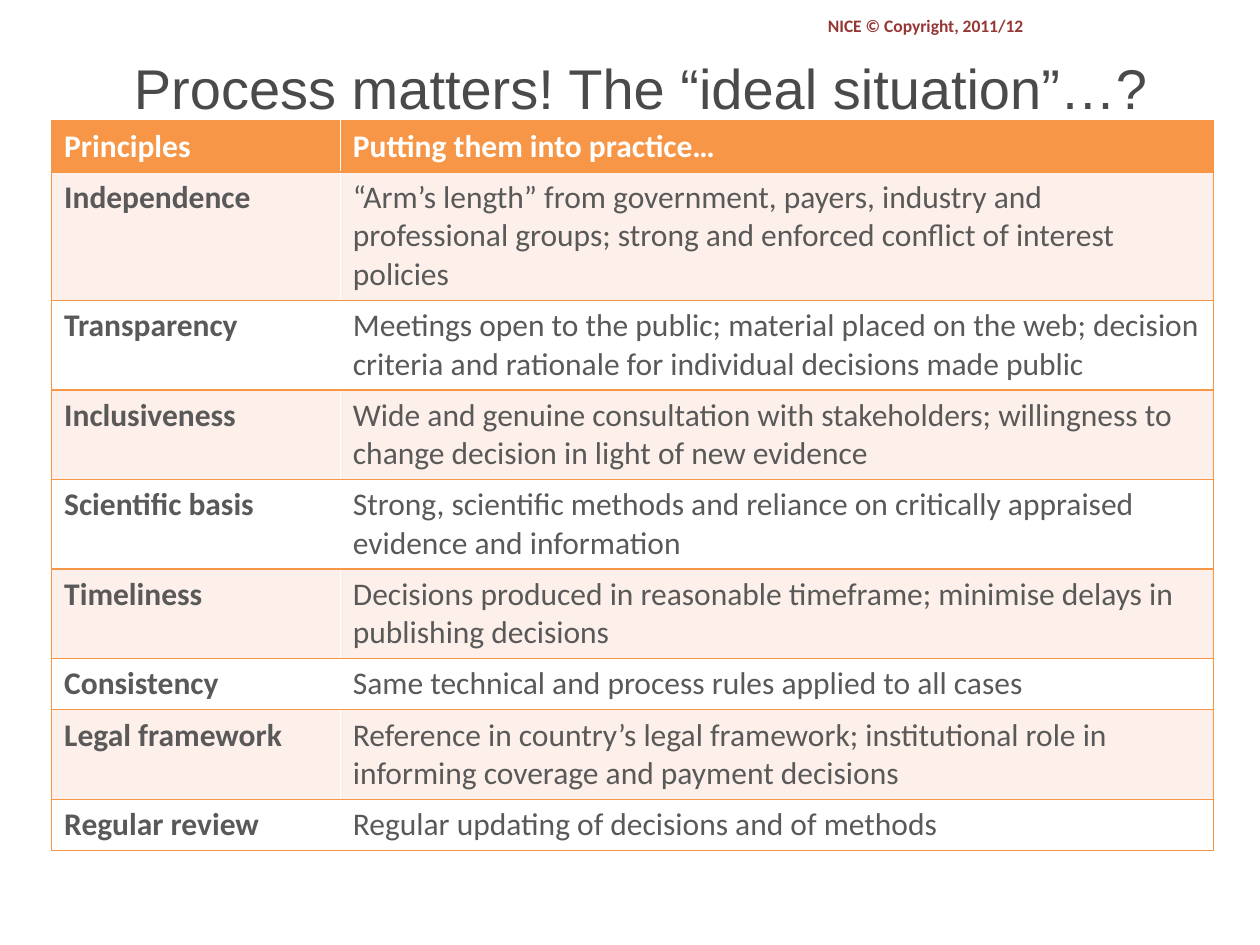
"""Build a slide that tabulates the principles of a sound decision process."""
from dataclasses import dataclass

from lxml import etree
from pptx import Presentation
from pptx import util as u
from pptx.dml.color import RGBColor
from pptx.enum import text
from pptx.oxml import ns

ORANGE = RGBColor(0xF7, 0x96, 0x46)
BLUSH = RGBColor(0xFD, 0xEF, 0xE9)
WHITE = RGBColor(0xFF, 0xFF, 0xFF)
GREY = RGBColor(0x59, 0x59, 0x59)
CHARCOAL = RGBColor(0x4A, 0x4A, 0x4A)
MAROON = RGBColor(0x95, 0x37, 0x35)

COLUMN_WIDTHS = (165, 499)
ONE_LINE_HEIGHT = 29.2
EXTRA_LINE_HEIGHT = 22


@dataclass(frozen=True)
class Principle:
    name: str
    practice: str
    lines: int = 2


@dataclass(frozen=True)
class Label:
    wording: str
    left: float
    top: float
    width: float
    height: float
    font: dict
    anchor: text.MSO_ANCHOR = text.MSO_ANCHOR.TOP
    alignment: text.PP_ALIGN = text.PP_ALIGN.LEFT


HEADING = Principle("Principles", "Putting them into practice…", 1)
PRINCIPLES = (
    Principle("Independence", "“Arm’s length” from government, payers, industry and professional "
              "groups; strong and enforced conflict of interest policies", 3),
    Principle("Transparency", "Meetings open to the public; material placed on the web; decision "
              "criteria and rationale for individual decisions made public"),
    Principle("Inclusiveness", "Wide and genuine consultation with stakeholders; willingness to "
              "change decision in light of new evidence"),
    Principle("Scientific basis", "Strong, scientific methods and reliance on critically appraised "
              "evidence and information"),
    Principle("Timeliness", "Decisions produced in reasonable timeframe; minimise delays in "
              "publishing decisions"),
    Principle("Consistency", "Same technical and process rules applied to all cases", 1),
    Principle("Legal framework", "Reference in country’s legal framework; institutional role in "
              "informing coverage and payment decisions"),
    Principle("Regular review", "Regular updating of decisions and of methods", 1),
)
TITLE = Label("Process matters! The “ideal situation”…?", 55.5, 5, 622, 90,
              {"name": "Arial", "size": u.Pt(32), "color": CHARCOAL},
              text.MSO_ANCHOR.MIDDLE, text.PP_ALIGN.CENTER)
COPYRIGHT = Label("NICE © Copyright, 2011/12", 466, 5, 254, 19.4,
                  {"name": "Calibri", "size": u.Pt(10), "color": MAROON, "bold": True})


def format_font(font, values: dict) -> None:
    """Apply each format value to the font."""
    for attribute, value in values.items():
        if attribute == "color":
            font.color.rgb = value
        else:
            setattr(font, attribute, value)


def draw_label(slide, label: Label) -> None:
    """Draw one line of free text."""
    box = slide.shapes.add_textbox(
        *(u.Pt(length) for length in (label.left, label.top, label.width, label.height)))
    frame = box.text_frame
    frame.word_wrap = True
    frame.vertical_anchor = label.anchor
    paragraph = frame.paragraphs[0]
    paragraph.alignment = label.alignment
    run = paragraph.add_run()
    run.text = label.wording
    format_font(run.font, label.font)


def draw_borders(cell, sides: str) -> None:
    """Rule the given sides of a cell in orange."""
    properties = cell._tc.get_or_add_tcPr()
    for position, side in enumerate(sides):
        line = etree.Element(ns.qn(f"a:ln{side}"), w=str(u.Pt(1)))
        fill = etree.SubElement(line, ns.qn("a:solidFill"))
        etree.SubElement(fill, ns.qn("a:srgbClr"), val=str(ORANGE))
        properties.insert(position, line)


def draw_cell(cell, wording: str, fill: RGBColor, sides: str, font: dict) -> None:
    """Fill, rule and letter one table cell."""
    cell.fill.solid()
    cell.fill.fore_color.rgb = fill
    draw_borders(cell, sides)
    run = cell.text_frame.paragraphs[0].add_run()
    run.text = wording
    format_font(run.font, {"name": "Calibri", "size": u.Pt(18), **font})


def draw_principles(slide) -> None:
    """Draw the table of principles and practices."""
    rows = (HEADING, *PRINCIPLES)
    heights = [ONE_LINE_HEIGHT + EXTRA_LINE_HEIGHT * (row.lines - 1) for row in rows]
    table = slide.shapes.add_table(len(rows), len(COLUMN_WIDTHS), u.Pt(29.5), u.Pt(69.2),
                                   u.Pt(sum(COLUMN_WIDTHS)), u.Pt(sum(heights))).table
    for column, width in zip(table.columns, COLUMN_WIDTHS):
        column.width = u.Pt(width)
    for index, (row, height) in enumerate(zip(rows, heights)):
        table.rows[index].height = u.Pt(height)
        heading = row is HEADING
        fill = ORANGE if heading else (WHITE, BLUSH)[index % 2]
        color = WHITE if heading else GREY
        draw_cell(table.cell(index, 0), row.name, fill, "LTB", {"color": color, "bold": True})
        draw_cell(table.cell(index, 1), row.practice, fill, "RTB",
                  {"color": color, "bold": heading})


def main() -> None:
    """Assemble and save the slide."""
    presentation = Presentation()
    presentation.slide_width, presentation.slide_height = u.Pt(720), u.Pt(540)
    slide = presentation.slides.add_slide(presentation.slide_layouts[6])
    draw_label(slide, TITLE)
    draw_principles(slide)
    draw_label(slide, COPYRIGHT)
    presentation.save("out.pptx")


if __name__ == "__main__":
    main()
